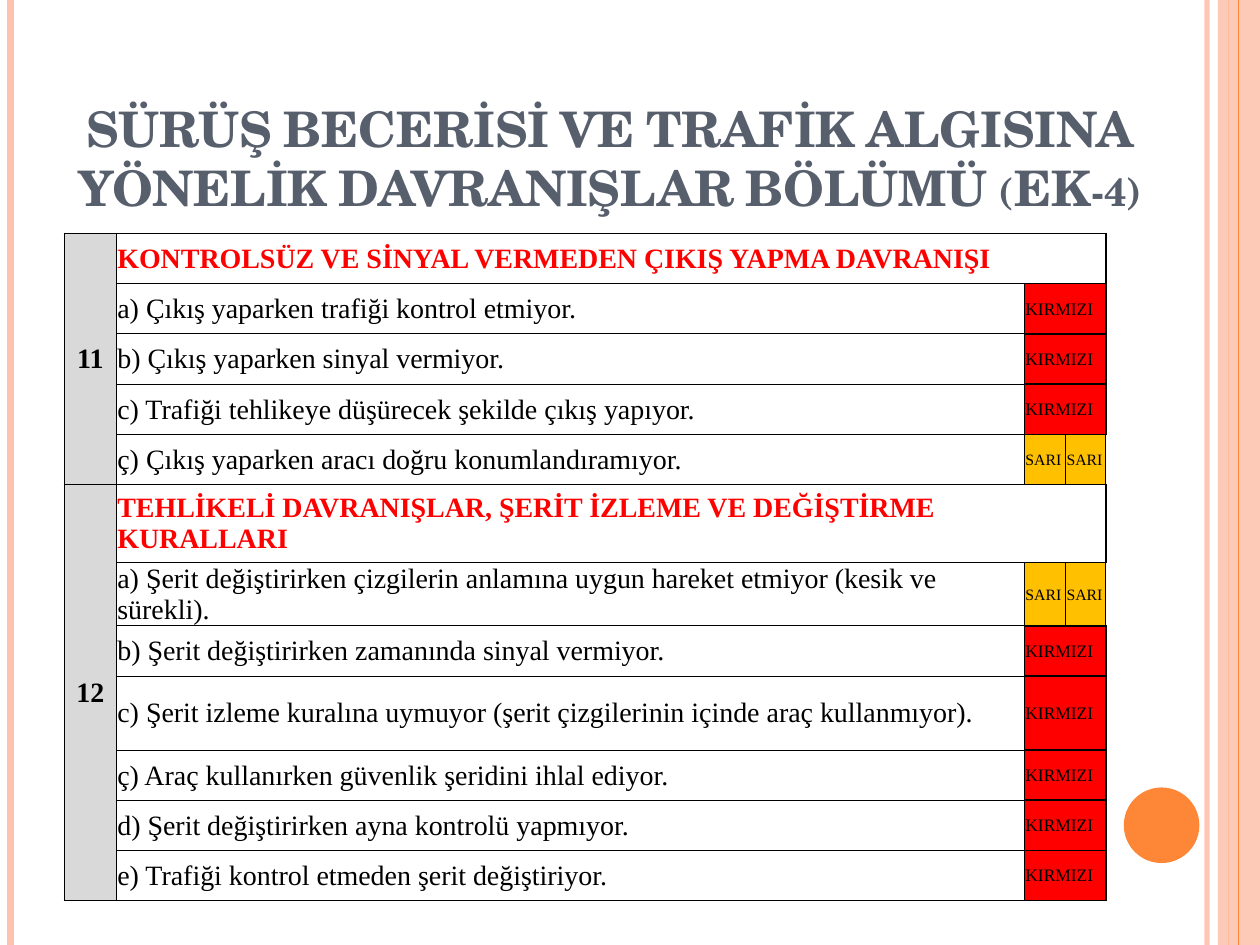
from lxml.etree import SubElement
from pptx import Presentation
from pptx.dml.color import RGBColor
from pptx.enum.shapes import MSO_CONNECTOR as Connector, MSO_SHAPE as Shape
from pptx.enum.text import MSO_ANCHOR as Anchor, MSO_AUTO_SIZE as AutoSize, PP_ALIGN as Align
from pptx.oxml import parse_xml
from pptx.oxml.ns import nsdecls, qn
from pptx.util import Pt

PEACH = RGBColor(0xFE, 0xC3, 0xAE)
ORANGE = RGBColor(0xFE, 0x86, 0x37)
SLATE = RGBColor(0x57, 0x5F, 0x6D)
BLACK = RGBColor(0, 0, 0)
RED = RGBColor(0xFF, 0, 0)
AMBER = RGBColor(0xFF, 0xC0, 0)
GRAY = RGBColor(0xD9, 0xD9, 0xD9)
TITLE_FONT = "TeX Gyre Schola"
TABLE_FONT = "Times New Roman"

TITLE = "SÜRÜŞ BECERİSİ VE TRAFİK ALGISINA YÖNELİK DAVRANIŞLAR BÖLÜMÜ (EK-4)"
ROW = 28.7
COLUMN_WIDTHS = (29.7, 518.9, 23.5, 23.1)
KIRMIZI, SARI = "KIRMIZI", "SARI"

# Section: number, heading, heading height, items (text, mark, row height)
SECTIONS = [
    ("11", "KONTROLSÜZ VE SİNYAL VERMEDEN ÇIKIŞ YAPMA DAVRANIŞI", ROW, [
        ("a) Çıkış yaparken trafiği kontrol etmiyor.", KIRMIZI, ROW),
        ("b) Çıkış yaparken sinyal vermiyor.", KIRMIZI, ROW),
        ("c) Trafiği tehlikeye düşürecek şekilde çıkış yapıyor.", KIRMIZI, ROW),
        ("ç) Çıkış yaparken aracı doğru konumlandıramıyor.", SARI, ROW),
    ]),
    ("12", "TEHLİKELİ DAVRANIŞLAR, ŞERİT İZLEME VE DEĞİŞTİRME KURALLARI", 44.6, [
        ("a) Şerit değiştirirken çizgilerin anlamına uygun hareket etmiyor (kesik ve sürekli).",
         SARI, ROW),
        ("b) Şerit değiştirirken zamanında sinyal vermiyor.", KIRMIZI, ROW),
        ("c) Şerit izleme kuralına uymuyor (şerit çizgilerinin içinde araç kullanmıyor).",
         KIRMIZI, 42.3),
        ("ç) Araç kullanırken güvenlik şeridini ihlal ediyor.", KIRMIZI, ROW),
        ("d) Şerit değiştirirken ayna kontrolü yapmıyor.", KIRMIZI, ROW),
        ("e) Trafiği kontrol etmeden şerit değiştiriyor.", KIRMIZI, ROW),
    ]),
]


def set_opacity(shape, percent):
    for color in shape._element.spPr.iter(qn("a:srgbClr")):
        SubElement(color, qn("a:alpha"), val=str(percent * 1000))


def add_rule(slide, x, top, height, color, width):
    rule = slide.shapes.add_connector(
        Connector.STRAIGHT, Pt(x), Pt(top), Pt(x), Pt(top + height))
    rule.line.color.rgb = color
    rule.line.width = Pt(width)
    SubElement(rule._element.spPr, qn("a:effectLst"))
    return rule


def add_plain_shape(slide, kind, box, color):
    shape = slide.shapes.add_shape(kind, *map(Pt, box))
    shape.shadow.inherit = False
    shape.fill.solid()
    shape.fill.fore_color.rgb = color
    shape.line.fill.background()
    return shape


def add_side_decoration(slide, left, top, width, height):
    right = left + width
    set_opacity(add_rule(slide, right - 30.2, top, height, PEACH, 3), 93)
    add_rule(slide, left + 6, top, height, PEACH, 4.5)
    add_rule(slide, right - 18, top, height, ORANGE, 0.75)
    band = add_plain_shape(slide, Shape.RECTANGLE, (right - 24, top, 24, height), PEACH)
    set_opacity(band, 87)
    add_rule(slide, right - 12.2, top, height, ORANGE, 0.75)
    add_plain_shape(slide, Shape.OVAL, (right - 77.8, top + 450, 43.2, 43.2), ORANGE)


def format_title(slide, left, top, width, height):
    title = slide.shapes.title
    title.left, title.top, title.width, title.height = map(Pt, (left, top, width, height))
    frame = title.text_frame
    frame.word_wrap = True
    frame.auto_size = AutoSize.NONE
    frame.vertical_anchor = Anchor.BOTTOM
    paragraph = frame.paragraphs[0]
    paragraph.alignment = Align.CENTER
    run = paragraph.add_run()
    run.text = TITLE
    run.font.name, run.font.size, run.font.bold = TITLE_FONT, Pt(28), True
    run.font.color.rgb = SLATE
    run._r.get_or_add_rPr().set("cap", "small")


def set_borders(cell, widths):
    """Widths in points: left, right, top, bottom."""
    properties = cell._tc.get_or_add_tcPr()
    for index, (side, width) in enumerate(zip("LRTB", widths)):
        properties.insert(index, parse_xml(
            f'<a:ln{side} {nsdecls("a")} w="{Pt(width)}"><a:solidFill>'
            f'<a:srgbClr val="{BLACK}"/></a:solidFill></a:ln{side}>'))


def fill_cell(table, row, column, text, borders, size=16, color=BLACK, bold=False,
              fill=None, align=Align.LEFT, rows=1, columns=1):
    cell = table.cell(row, column)
    last_row, last_column = row + rows - 1, column + columns - 1
    if rows > 1 or columns > 1:
        cell.merge(table.cell(last_row, last_column))
    for r in range(row, last_row + 1):
        for c in range(column, last_column + 1):
            part = table.cell(r, c)
            if fill is None:
                part.fill.background()
            else:
                part.fill.solid()
                part.fill.fore_color.rgb = fill
            set_borders(part, borders)
    cell.margin_left = cell.margin_right = cell.margin_top = Pt(0.6)
    cell.margin_bottom = Pt(0)
    cell.vertical_anchor = Anchor.MIDDLE
    paragraph = cell.text_frame.paragraphs[0]
    paragraph.alignment = align
    run = paragraph.add_run()
    run.text = text
    run.font.name, run.font.size, run.font.bold = TABLE_FONT, Pt(size), bold
    run.font.color.rgb = color


def add_section(table, first, number, heading, items):
    fill_cell(table, first, 0, number, (1, 0.5, 1, 1), bold=True, fill=GRAY,
              align=Align.CENTER, rows=len(items) + 1)
    fill_cell(table, first, 1, heading, (0.5, 1, 1, 0.5), color=RED, bold=True, columns=3)
    for row, (text, mark, _) in enumerate(items, first + 1):
        bottom = 1 if row == first + len(items) else 0.5
        fill_cell(table, row, 1, text, (0.5, 0.5, 0.5, bottom))
        if mark == KIRMIZI:
            fill_cell(table, row, 2, mark, (0.5, 1, 1, 1), size=10, fill=RED, columns=2)
        else:
            for column in (2, 3):
                fill_cell(table, row, column, mark, (0.5, 0.5, 0.5, 1), size=9, fill=AMBER)


def add_behaviour_table(slide, left, top):
    heights = []
    for _, _, heading_height, items in SECTIONS:
        heights += [heading_height] + [height for _, _, height in items]
    table = slide.shapes.add_table(
        len(heights), len(COLUMN_WIDTHS), Pt(left), Pt(top),
        Pt(sum(COLUMN_WIDTHS)), Pt(sum(heights))).table
    table.first_row = table.horz_banding = False
    for column, width in zip(table.columns, COLUMN_WIDTHS):
        column.width = Pt(width)
    for row, height in zip(table.rows, heights):
        row.height = Pt(height)
    first = 0
    for number, heading, _, items in SECTIONS:
        add_section(table, first, number, heading, items)
        first += len(items) + 1


def main():
    presentation = Presentation()
    presentation.slide_width, presentation.slide_height = Pt(720), Pt(540)
    slide = presentation.slides.add_slide(presentation.slide_layouts[5])
    add_side_decoration(slide, 0, 0, 720, 540)
    format_title(slide, 20, 37.4, 657.4, 90)
    add_behaviour_table(slide, 36.8, 133.4)
    presentation.save("out.pptx")


if __name__ == "__main__":
    main()
